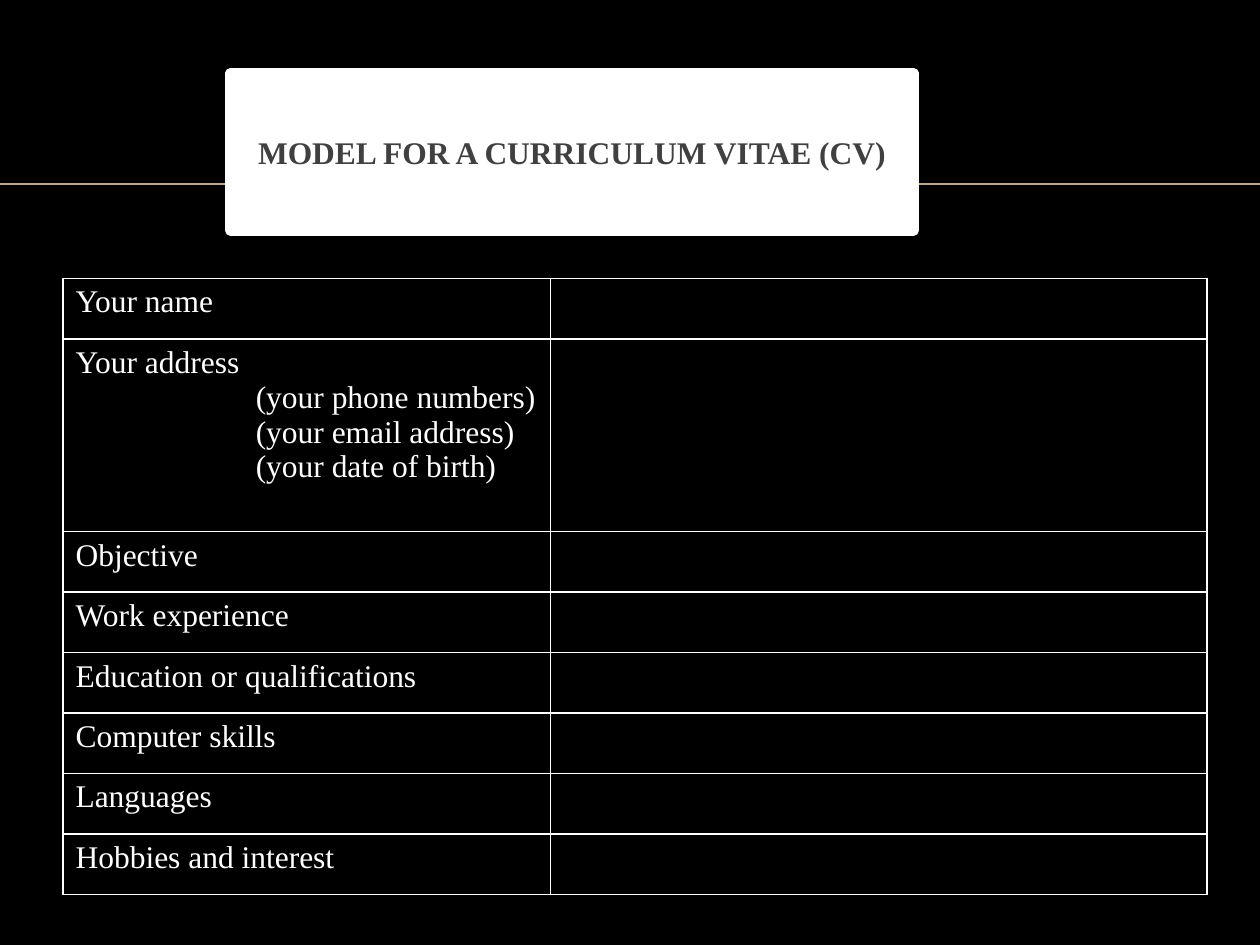
"""Build a slide with a fill-in model for a curriculum vitae."""
from lxml import etree
from pptx import Presentation
from pptx import util as u
from pptx.dml.color import RGBColor
from pptx.enum import shapes, text
from pptx.oxml import ns

BLACK = RGBColor(0x00, 0x00, 0x00)
WHITE = RGBColor(0xFF, 0xFF, 0xFF)
GREY = RGBColor(0x40, 0x40, 0x40)
SAND = RGBColor(0xBB, 0xAA, 0x8A)

ROW_HEIGHT = 0.48
ADDRESS_HEIGHT = 1.53
COLUMN_WIDTHS = (3.87, 5.21)
DETAIL_INDENT = 1.43
SECTIONS = (
    ("Your name",),
    ("Your address", "(your phone numbers)", "(your email address)", "(your date of birth)"),
    ("Objective",),
    ("Work experience",),
    ("Education or qualifications",),
    ("Computer skills",),
    ("Languages",),
    ("Hobbies and interest",),
)


class SlideBuilder:
    """Holds the text style and the current slide."""

    font = "Times New Roman"
    size = u.Pt(18)

    def __init__(self, slide):
        self.s = slide

    def background(self, color):
        fill = self.s.background.fill
        fill.solid()
        fill.fore_color.rgb = color

    def format(self, p, color, bold=False):
        for r in p.runs:
            r.font.name = self.font
            r.font.size = self.size
            r.font.bold = bold
            r.font.color.rgb = color

    def line(self, x1, y1, x2, y2, color, width):
        cn = self.s.shapes.add_connector(
            shapes.MSO_CONNECTOR.STRAIGHT, *map(u.Inches, (x1, y1, x2, y2)))
        cn.line.color.rgb = color
        cn.line.width = u.Pt(width)
        etree.SubElement(cn.element.spPr, ns.qn("a:effectLst"))

    def title(self, box, words):
        sp = self.s.shapes.add_shape(
            shapes.MSO_SHAPE.RECTANGLE, *map(u.Inches, box))
        sp.shadow.inherit = False
        sp.fill.solid()
        sp.fill.fore_color.rgb = WHITE
        sp.line.color.rgb = WHITE
        sp.line.width = u.Pt(6)
        tf = sp.text_frame
        tf.text = words
        tf.word_wrap = True
        tf.vertical_anchor = text.MSO_ANCHOR.MIDDLE
        p = tf.paragraphs[0]
        p.alignment = text.PP_ALIGN.CENTER
        p.space_before = u.Pt(4)
        self.format(p, GREY, bold=True)

    def border(self, cell, color, width):
        tc_pr = cell._tc.get_or_add_tcPr()
        for side in ("a:lnL", "a:lnR", "a:lnT", "a:lnB"):
            ln = etree.SubElement(tc_pr, ns.qn(side), w=str(u.Pt(width)))
            fill = etree.SubElement(ln, ns.qn("a:solidFill"))
            etree.SubElement(fill, ns.qn("a:srgbClr"), val=str(color))

    def table(self, left, top, widths, sections):
        heights = [ADDRESS_HEIGHT if len(lines) > 1 else ROW_HEIGHT for lines in sections]
        table = self.s.shapes.add_table(
            len(sections), len(widths),
            *map(u.Inches, (left, top, sum(widths), sum(heights)))).table
        table.first_row = table.horz_banding = False
        for column, width in zip(table.columns, widths):
            column.width = u.Inches(width)
        for row, height, lines in zip(table.rows, heights, sections):
            row.height = u.Inches(height)
            for cell in row.cells:
                self.border(cell, WHITE, 1)
                cell.fill.solid()
                cell.fill.fore_color.rgb = BLACK
            self.label(row.cells[0], lines)

    def label(self, cell, lines):
        cell.margin_right = u.Inches(0.05)
        tf = cell.text_frame
        tf.text = "\n".join(lines)
        for p in tf.paragraphs:
            self.format(p, WHITE)
        for p in tf.paragraphs[1:]:
            p._p.get_or_add_pPr().set("marL", str(u.Inches(DETAIL_INDENT)))


def main():
    prs = Presentation()
    prs.slide_width, prs.slide_height = u.Inches(10), u.Inches(7.5)
    b = SlideBuilder(prs.slides.add_slide(prs.slide_layouts[6]))
    b.background(BLACK)
    b.line(0, 1.46, 10, 1.46, SAND, 1)
    b.table(0.5, 2.21, COLUMN_WIDTHS, SECTIONS)
    b.title((1.83, 0.58, 5.42, 1.25), "MODEL FOR A CURRICULUM VITAE (CV)")
    prs.save("out.pptx")


if __name__ == "__main__":
    main()
